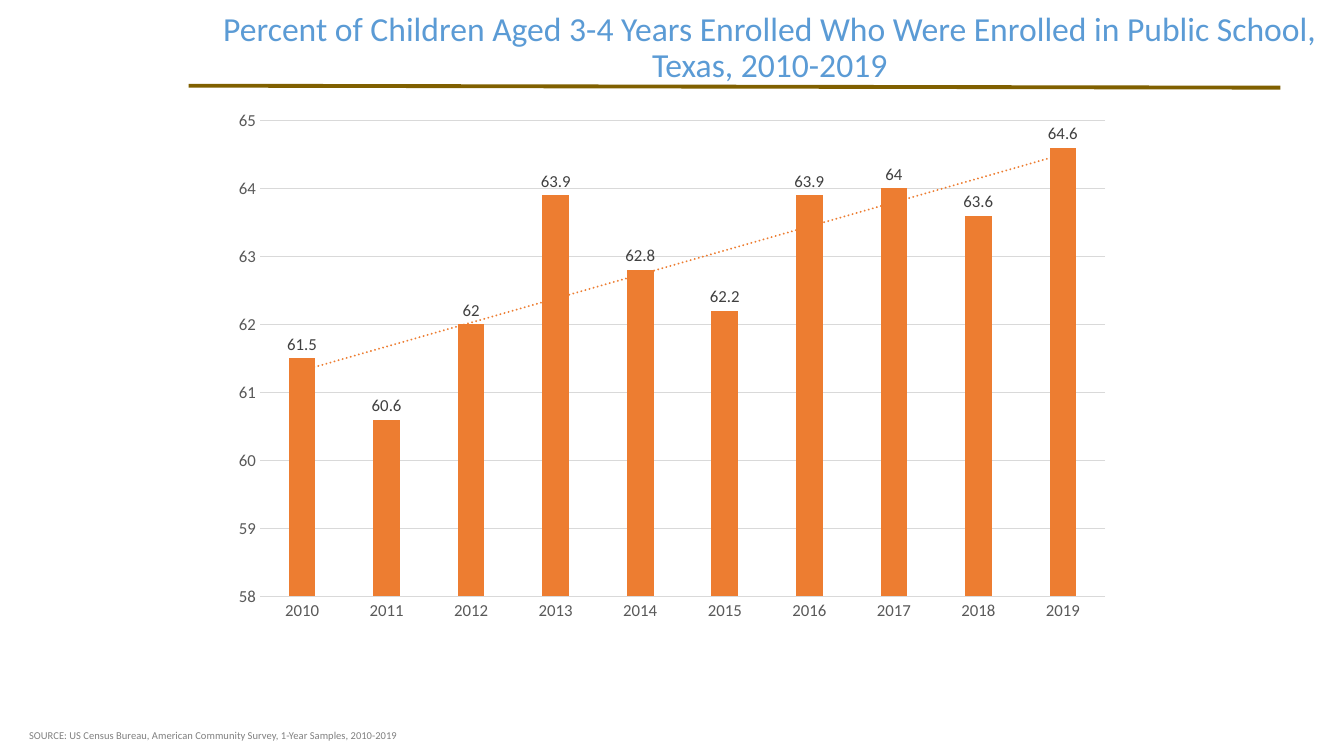
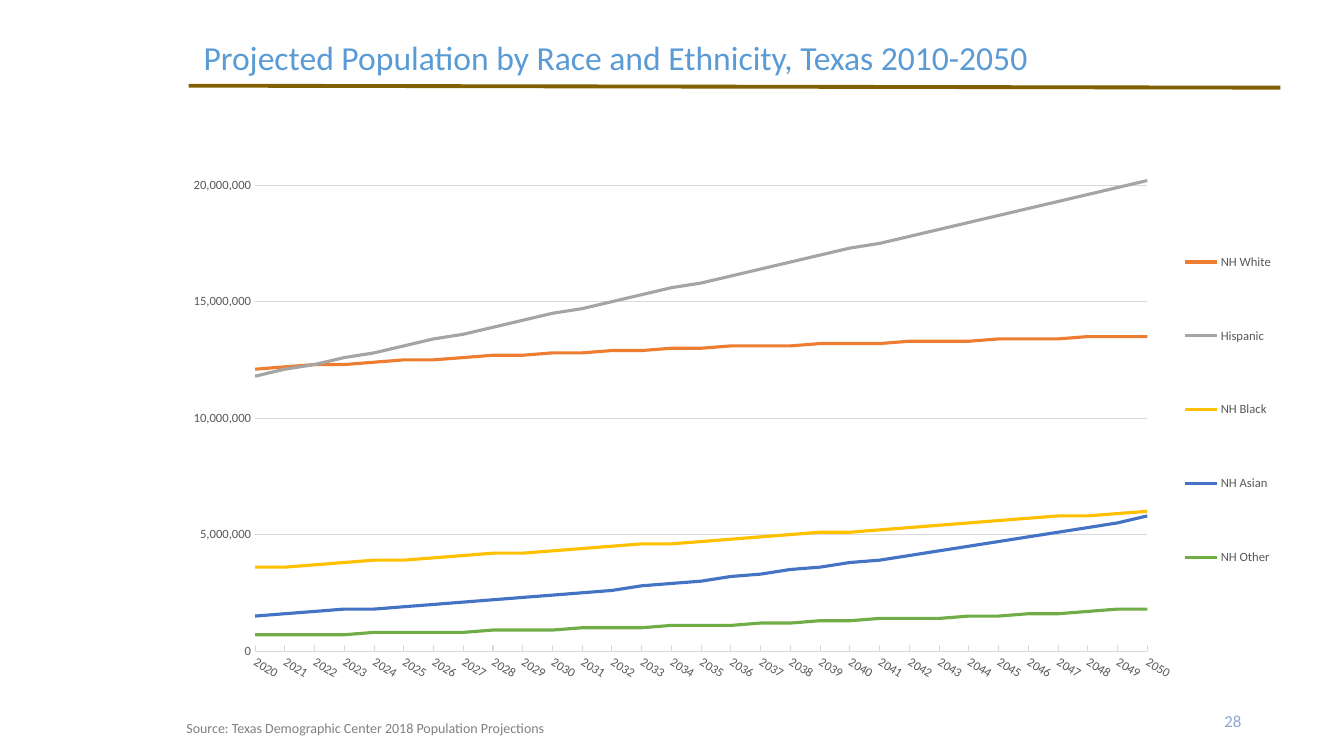
from lxml import etree
from pptx import Presentation
from pptx.chart.data import CategoryChartData
from pptx.dml.color import RGBColor
from pptx.enum.chart import XL_CHART_TYPE as Chart
from pptx.enum.chart import XL_LABEL_POSITION as LabelPosition
from pptx.enum.chart import XL_LEGEND_POSITION as LegendPosition
from pptx.enum.chart import XL_TICK_MARK as Tick
from pptx.enum.shapes import MSO_CONNECTOR as Connector
from pptx.enum.text import MSO_ANCHOR as Anchor
from pptx.enum.text import PP_ALIGN as Align
from pptx.oxml import parse_xml
from pptx.oxml.ns import nsdecls, qn
from pptx.util import Inches, Pt

FONT = "Calibri"
BLACK = RGBColor(0x00, 0x00, 0x00)
CHARCOAL = RGBColor(0x40, 0x40, 0x40)
SLATE = RGBColor(0x59, 0x59, 0x59)
GRAY = RGBColor(0x80, 0x80, 0x80)
SILVER = RGBColor(0xD9, 0xD9, 0xD9)
TITLE_BLUE = RGBColor(0x5B, 0x9B, 0xD5)
NUMBER_BLUE = RGBColor(0x8F, 0xA5, 0xD1)
BRONZE = RGBColor(0x80, 0x60, 0x00)
ORANGE = RGBColor(0xED, 0x7D, 0x31)
MID_GRAY = RGBColor(0xA5, 0xA5, 0xA5)
GOLD = RGBColor(0xFF, 0xC0, 0x00)
BLUE = RGBColor(0x44, 0x72, 0xC4)
GREEN = RGBColor(0x70, 0xAD, 0x47)

ENROLLMENT_TITLE = ("Percent of Children Aged 3-4 Years Enrolled Who Were "
                    "Enrolled in Public School, Texas, 2010-2019")
ENROLLMENT_SOURCE = ("SOURCE: US Census Bureau, American Community Survey, "
                     "1-Year Samples, 2010-2019")
ENROLLMENT_YEARS = range(2010, 2020)
ENROLLMENT = [61.5, 60.6, 62, 63.9, 62.8, 62.2, 63.9, 64, 63.6, 64.6]
ENROLLMENT_AREA = (2.19, 0.99, 8.95, 5.27)

POPULATION_TITLE = "Projected Population by Race and Ethnicity, Texas 2010-2050"
POPULATION_SOURCE = "Source: Texas Demographic Center 2018 Population Projections"
POPULATION_YEARS = range(2020, 2051)
POPULATION_UNIT = 100_000
POPULATION_AREA = (1.75, 1.1, 11.16, 5.99)
PLOT_AREA = (0.78, 0.16, 8.85, 5.2)
LEGEND_AREA = (9.87, 0.84, 1.12, 4.25)
YEAR_ANGLE = 32
POPULATION = [
    ("NH White", ORANGE,
     [121, 122, 123, 123, 124, 125, 125, 126, 127, 127, 128, 128, 129, 129, 130, 130,
      131, 131, 131, 132, 132, 132, 133, 133, 133, 134, 134, 134, 135, 135, 135]),
    ("Hispanic", MID_GRAY,
     [118, 121, 123, 126, 128, 131, 134, 136, 139, 142, 145, 147, 150, 153, 156, 158,
      161, 164, 167, 170, 173, 175, 178, 181, 184, 187, 190, 193, 196, 199, 202]),
    ("NH Black", GOLD,
     [36, 36, 37, 38, 39, 39, 40, 41, 42, 42, 43, 44, 45, 46, 46, 47,
      48, 49, 50, 51, 51, 52, 53, 54, 55, 56, 57, 58, 58, 59, 60]),
    ("NH Asian", BLUE,
     [15, 16, 17, 18, 18, 19, 20, 21, 22, 23, 24, 25, 26, 28, 29, 30,
      32, 33, 35, 36, 38, 39, 41, 43, 45, 47, 49, 51, 53, 55, 58]),
    ("NH Other", GREEN,
     [7, 7, 7, 7, 8, 8, 8, 8, 9, 9, 9, 10, 10, 10, 11, 11,
      11, 12, 12, 13, 13, 14, 14, 14, 15, 15, 16, 16, 17, 18, 18]),
]


def style_font(font, size, color):
    font.name, font.size = FONT, Pt(size)
    font.color.rgb = color


def style_line(line, color, width):
    line.color.rgb, line.width = color, Pt(width)


def add_text(page, text, area, *, size, color, align=Align.LEFT,
             anchor=Anchor.TOP, spacing=1.0):
    frame = page.shapes.add_textbox(*map(Inches, area)).text_frame
    frame.word_wrap = True
    frame.vertical_anchor = anchor
    para = frame.paragraphs[0]
    para.alignment, para.line_spacing = align, spacing
    span = para.add_run()
    span.text = text
    style_font(span.font, size, color)


def add_page(deck, title, area, align):
    page = deck.slides.add_slide(deck.slide_layouts[6])
    rule = page.shapes.add_connector(
        Connector.STRAIGHT, *map(Inches, (1.87, 0.85, 12.7, 0.87)))
    style_line(rule.line, BRONZE, 2.75)
    etree.SubElement(rule.line._get_or_add_ln().getparent(), qn("a:effectLst"))
    add_text(page, title, area, size=24, color=TITLE_BLUE, align=align,
             anchor=Anchor.MIDDLE, spacing=0.9)
    return page


def add_chart(page, kind, area, years, rows, *, size, low, high, step, number_format):
    data = CategoryChartData(number_format=number_format)
    data.categories = [str(year) for year in years]
    for name, _, values in rows:
        data.add_series(name, values)
    chart = page.shapes.add_chart(kind, *map(Inches, area), data).chart
    style_font(chart.font, 10, BLACK)
    chart.has_title = chart.has_legend = False
    chart.plots[0].vary_by_categories = False

    years_axis, scale = chart.category_axis, chart.value_axis
    for axis in (years_axis, scale):
        axis.major_tick_mark = axis.minor_tick_mark = Tick.NONE
        style_font(axis.tick_labels.font, size, SLATE)
    style_line(years_axis.format.line, SILVER, 0.75)
    scale.format.line.fill.background()
    scale.minimum_scale, scale.maximum_scale, scale.major_unit = low, high, step
    scale.tick_labels.number_format = number_format
    scale.tick_labels.number_format_is_linked = False
    style_line(scale.major_gridlines.format.line, SILVER, 0.75)
    return chart


def make_layout(part, whole, inner=False):
    x, y, width, height = (length / whole[2 + index % 2]
                           for index, length in enumerate(part))
    target = '<c:layoutTarget val="inner"/>' if inner else ""
    return parse_xml(
        f'<c:layout {nsdecls("c")}><c:manualLayout>{target}'
        '<c:xMode val="edge"/><c:yMode val="edge"/>'
        f'<c:x val="{x}"/><c:y val="{y}"/><c:w val="{width}"/><c:h val="{height}"/>'
        '</c:manualLayout></c:layout>')


def drop_layout(element):
    for layout in element.findall(qn("c:layout")):
        element.remove(layout)


def add_trend_line(series, color, width):
    trend = parse_xml(
        f'<c:trendline {nsdecls("c", "a")}><c:spPr><a:ln w="{Pt(width)}" cap="rnd">'
        f'<a:solidFill><a:srgbClr val="{color}"/></a:solidFill>'
        '<a:prstDash val="sysDot"/></a:ln></c:spPr><c:trendlineType val="linear"/>'
        '<c:dispRSqr val="0"/><c:dispEq val="0"/></c:trendline>')
    series._element.find(qn("c:cat")).addprevious(trend)


def build_enrollment(deck):
    page = add_page(deck, ENROLLMENT_TITLE, (1.8, -0.33, 11.67, 1.63), Align.CENTER)
    chart = add_chart(page, Chart.COLUMN_CLUSTERED, ENROLLMENT_AREA,
                      ENROLLMENT_YEARS, [("Series 1", ORANGE, ENROLLMENT)],
                      size=12, low=58, high=65, step=1, number_format="General")
    plot = chart.plots[0]
    plot.gap_width = 219
    series = plot.series[0]
    series.format.fill.solid()
    series.format.fill.fore_color.rgb = ORANGE
    labels = series.data_labels
    labels.show_value = True
    labels.position = LabelPosition.OUTSIDE_END
    style_font(labels.font, 12, CHARCOAL)
    add_trend_line(series, ORANGE, 1.5)
    add_text(page, ENROLLMENT_SOURCE, (0.19, 7.18, 5.25, 0.23), size=7.5, color=GRAY)


def build_population(deck):
    page = add_page(deck, POPULATION_TITLE, (1.92, 0.08, 10.22, 1.03), Align.LEFT)
    add_text(page, "28", (9.41, 6.95, 3, 0.4), size=12, color=NUMBER_BLUE,
             align=Align.RIGHT, anchor=Anchor.MIDDLE)
    add_text(page, POPULATION_SOURCE, (1.75, 7.09, 9.58, 0.27), size=10, color=GRAY)
    rows = [(name, color, [value * POPULATION_UNIT for value in values])
            for name, color, values in POPULATION]
    chart = add_chart(page, Chart.LINE, POPULATION_AREA, POPULATION_YEARS,
                      rows, size=9, low=0, high=22_500_000, step=5_000_000,
                      number_format="#,##0")
    for series, (_, color, _) in zip(chart.plots[0].series, rows):
        series.smooth = False
        style_line(series.format.line, color, 2.25)

    years_axis = chart.category_axis
    years_axis.major_tick_mark = Tick.INSIDE
    label_body = years_axis._element.find(qn("c:txPr")).find(qn("a:bodyPr"))
    label_body.set("rot", str(YEAR_ANGLE * 60_000))
    scale = chart.value_axis._element
    crossing = scale.find(qn("c:crossBetween"))
    if crossing is None:
        crossing = parse_xml(f'<c:crossBetween {nsdecls("c")}/>')
        scale.find(qn("c:crosses")).addnext(crossing)
    crossing.set("val", "midCat")

    plot_area = chart._chartSpace.chart.plotArea
    drop_layout(plot_area)
    plot_area.insert(0, make_layout(PLOT_AREA, POPULATION_AREA, inner=True))
    chart.has_legend = True
    legend = chart.legend
    legend.position = LegendPosition.RIGHT
    legend.include_in_layout = False
    style_font(legend.font, 9, SLATE)
    drop_layout(legend._element)
    legend._element.find(qn("c:legendPos")).addnext(
        make_layout(LEGEND_AREA, POPULATION_AREA))


def main():
    deck = Presentation()
    deck.slide_width, deck.slide_height = Inches(13.33), Inches(7.5)
    build_enrollment(deck)
    build_population(deck)
    deck.save("out.pptx")


if __name__ == "__main__":
    main()
